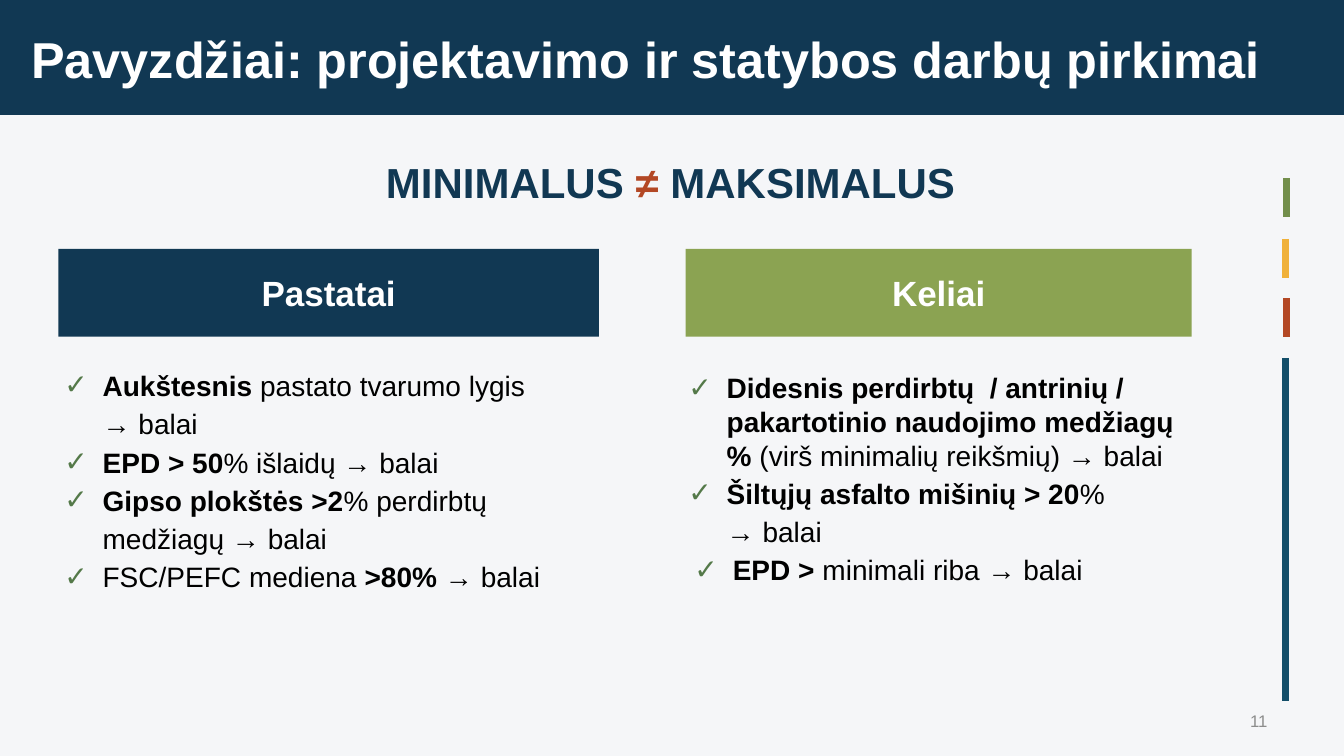
from pptx import Presentation
from pptx.dml.color import RGBColor
from pptx.enum.shapes import MSO_CONNECTOR, MSO_SHAPE
from pptx.enum.text import MSO_ANCHOR, PP_ALIGN
from pptx.oxml.ns import qn
from pptx.util import Inches, Pt
from lxml import etree

NAVY = RGBColor(0x11, 0x38, 0x53)
GREEN = RGBColor(0x8B, 0xA3, 0x52)
RUST = RGBColor(0xB3, 0x48, 0x25)
LEAF = RGBColor(0x72, 0x8E, 0x4B)
AMBER = RGBColor(0xF0, 0xB1, 0x3A)
TEAL = RGBColor(0x13, 0x4E, 0x69)
PALE = RGBColor(0xF5, 0xF6, 0xF8)
GREY = RGBColor(0x8C, 0x8C, 0x8C)
WHITE = RGBColor(0xFF, 0xFF, 0xFF)
BLACK = RGBColor(0, 0, 0)
TICK = "547949"
RECT, STRAIGHT = MSO_SHAPE.RECTANGLE, MSO_CONNECTOR.STRAIGHT
TOP, MIDDLE = MSO_ANCHOR.TOP, MSO_ANCHOR.MIDDLE
LEFT, CENTER, RIGHT = PP_ALIGN.LEFT, PP_ALIGN.CENTER, PP_ALIGN.RIGHT

TITLE = "Pavyzdžiai: projektavimo ir statybos darbų pirkimai"
MOTTO = [("MINIMALUS", NAVY), (" ≠ ", RUST), ("MAKSIMALUS", NAVY)]
PAGE = "11"

# Header: text, fill, left, width
HEADS = [("Pastatai", NAVY, 0.58, 5.36), ("Keliai", GREEN, 6.8, 5.02)]

# List: box, then items of (indent, line spacing, runs of (text, bold))
LISTS = [
    ((0.41, 3.56, 5.53, 2.37), [
        (0.51, 1.14, [("Aukštesnis", True), (" pastato tvarumo lygis\n→ balai", False)]),
        (0.51, 1.14, [("EPD > 50", True), ("% išlaidų → balai", False)]),
        (0.51, 1.14, [("Gipso plokštės >2", True), ("% perdirbtų medžiagų → balai", False)]),
        (0.51, 1.14, [("FSC/PEFC mediena ", False), (">80% ", True), ("→ balai", False)]),
    ]),
    ((6.66, 3.63, 5.16, 2.23), [
        (0.45, 1.0, [("Didesnis perdirbtų  / antrinių / pakartotinio naudojimo medžiagų % ", True),
                     ("(virš minimalių reikšmių) → balai", False)]),
        (0.45, 1.14, [("Šiltųjų asfalto mišinių > 20", True), ("%\n→ balai", False)]),
        (0.51, 1.14, [("EPD > ", True), ("minimali riba → balai", False)]),
    ]),
]

# Side mark: x, top, bottom, colour
MARKS = [(12.76, 1.77, 2.15, LEAF), (12.75, 2.37, 2.76, AMBER),
         (12.76, 2.96, 3.34, RUST), (12.75, 3.55, 6.95, TEAL)]


def add_run(para, text, size, color, bold=False):
    """Add text to a paragraph, with a line break at each newline."""
    for i, line in enumerate(text.split("\n")):
        if i:
            para.add_line_break()
        run = para.add_run()
        run.text = line
        look = {"name": "Arial", "size": Pt(size), "bold": bold}
        for key, value in look.items():
            setattr(run.font, key, value)
        run.font.color.rgb = color


def add_tick(para, indent):
    props = para._p.get_or_add_pPr()
    props.set("marL", str(Inches(indent)))
    props.set("indent", str(Inches(-0.38)))
    tint = etree.SubElement(props, qn("a:buClr"))
    etree.SubElement(tint, qn("a:srgbClr")).set("val", TICK)
    etree.SubElement(props, qn("a:buFont")).set("typeface", "Arial")
    etree.SubElement(props, qn("a:buChar")).set("char", "✓")


def add_box(slide, box, anchor=TOP):
    frame = slide.shapes.add_textbox(*map(Inches, box)).text_frame
    frame.word_wrap = True
    frame.vertical_anchor = anchor
    return frame


def add_bar(slide, box, fill):
    bar = slide.shapes.add_shape(RECT, *map(Inches, box))
    bar.shadow.inherit = False
    bar.fill.solid()
    bar.fill.fore_color.rgb = fill
    bar.line.fill.background()
    return bar


def add_title(slide):
    title = slide.shapes.title
    place = {"left": 0.31, "top": 0.28, "width": 12.44, "height": 0.44}
    for key, value in place.items():
        setattr(title, key, Inches(value))
    frame = title.text_frame
    edges = ("margin_left", "margin_top", "margin_right", "margin_bottom")
    for key, value in {**dict.fromkeys(edges, 0), "vertical_anchor": TOP,
                       "word_wrap": True}.items():
        setattr(frame, key, value)
    para = frame.paragraphs[0]
    para.alignment = LEFT
    add_run(para, TITLE, 36, WHITE, True)


def add_list(slide, box, items):
    frame = add_box(slide, box)
    for i, (indent, spacing, runs) in enumerate(items):
        para = frame.add_paragraph() if i else frame.paragraphs[0]
        para.line_spacing = spacing
        add_tick(para, indent)
        for text, bold in runs:
            add_run(para, text, 20, BLACK, bold)


def add_mark(slide, x, top, bottom, color):
    mark = slide.shapes.add_connector(STRAIGHT, *map(Inches, (x, top, x, bottom)))
    mark.line.color.rgb = color
    mark.line.width = Pt(4.5)
    etree.SubElement(mark._element.spPr, qn("a:effectLst"))


def main():
    deck = Presentation()
    deck.slide_width, deck.slide_height = Inches(13.33), Inches(7.5)
    slide = deck.slides.add_slide(deck.slide_layouts[5])
    slide.background.fill.solid()
    slide.background.fill.fore_color.rgb = PALE

    band = add_bar(slide, (0, 0, 13.33, 1.14), NAVY)
    slide.shapes.title._element.addprevious(band._element)
    add_title(slide)

    motto = add_box(slide, (3.73, 1.5, 6.41, 0.61)).paragraphs[0]
    for text, color in MOTTO:
        add_run(motto, text, 30, color, True)

    for text, fill, left, width in HEADS:
        frame = add_bar(slide, (left, 2.47, width, 0.87), fill).text_frame
        frame.vertical_anchor = MIDDLE
        frame.paragraphs[0].alignment = CENTER
        add_run(frame.paragraphs[0], text, 25, WHITE, True)
    for box, items in LISTS:
        add_list(slide, box, items)
    for mark in MARKS:
        add_mark(slide, *mark)

    page = add_box(slide, (9.56, 6.95, 3.11, 0.4), MIDDLE).paragraphs[0]
    page.alignment = RIGHT
    add_run(page, PAGE, 12, GREY)
    deck.save("out.pptx")


if __name__ == "__main__":
    main()
